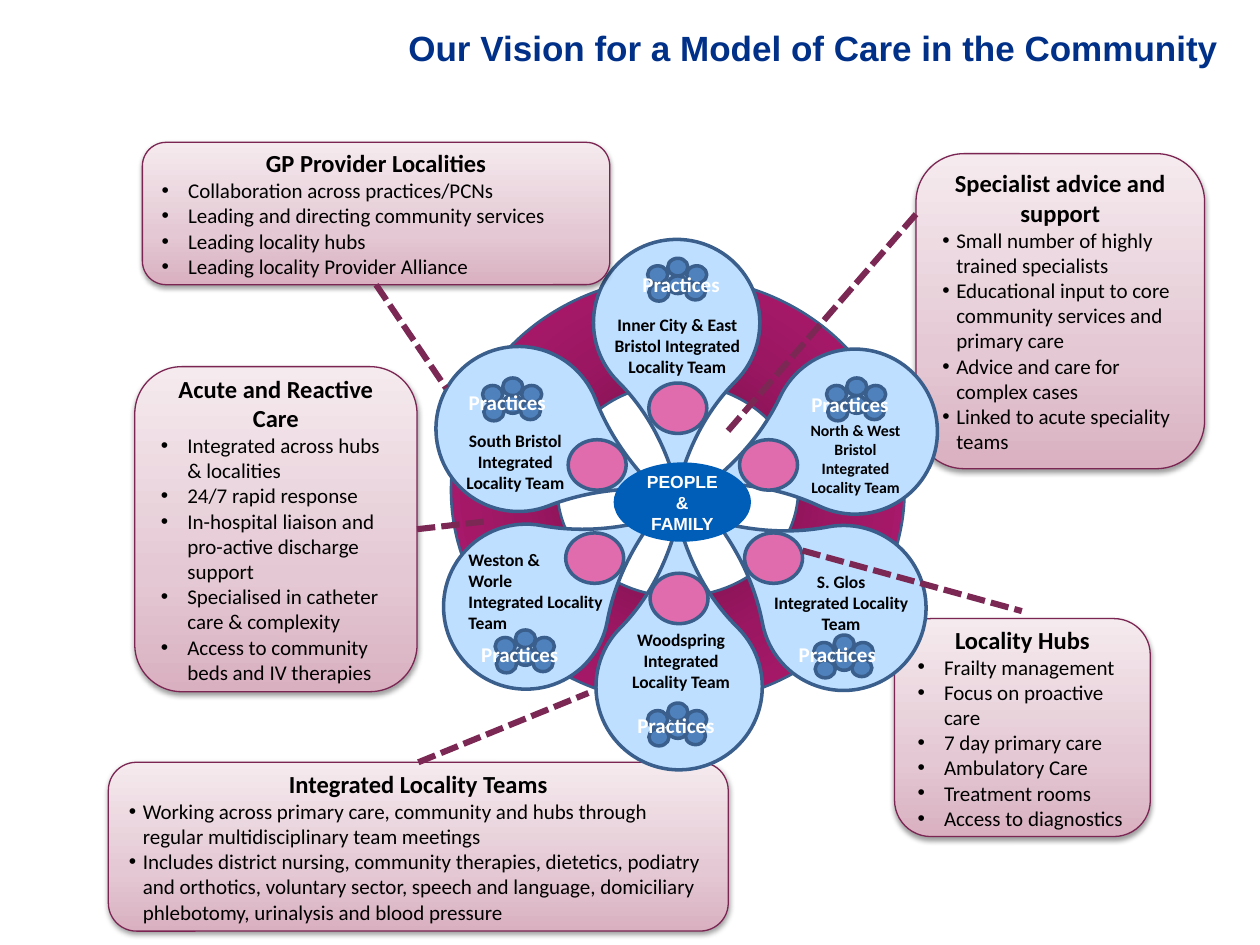
from dataclasses import dataclass

from lxml.etree import SubElement
from pptx import Presentation
from pptx.dml.color import RGBColor
from pptx.enum.dml import MSO_LINE
from pptx.enum.shapes import MSO_CONNECTOR, MSO_SHAPE
from pptx.enum.text import MSO_ANCHOR, MSO_AUTO_SIZE, PP_ALIGN
from pptx.oxml import parse_xml
from pptx.oxml.ns import nsdecls, qn
from pptx.util import Inches, Pt

WIDTH, HEIGHT = Inches(10), Inches(7.5)
COL, ROW = WIDTH / 100, HEIGHT / 75


@dataclass(frozen=True)
class Theme:
    title = dict(size=20, name="Arial", bold=True, color="003087")
    heading = dict(size=14, name="Calibri", bold=True, color="000000")
    item = dict(size=12, name="Calibri", bold=False, color="000000")
    team = dict(size=10, name="Calibri", bold=True, color="000000")
    small_team = dict(size=9, name="Calibri", bold=True, color="000000")
    practice = dict(size=12, name="Calibri", bold=True, color="FFFFFF")
    core = dict(size=10, name="Arial", bold=True, color="FFFFFF")
    panel = ((0, "D9B0C0"), (35, "E4C8D3"), (100, "F5EAEE"))
    ring = ((0, "6D1045"), (50, "9B1762"), (100, "B81B74"))
    panel_line, link, outline = "7B2553", "7C2855", "3A5F8C"
    petal, hub, dot, centre = "BEDFFF", "E06BAD", "4F81BD", "005EB8"


T = Theme()
LINEAR = '<a:lin ang="16200000" scaled="1"/>'
RADIAL = ('<a:path path="circle"><a:fillToRect l="50000" t="50000" '
          'r="50000" b="50000"/></a:path>')
ALT = MSO_SHAPE.FLOWCHART_ALTERNATE_PROCESS
WIDE, TIGHT = 0.21, 0.11

PANELS = {
    "hubs": (ALT, (71, 49.1, 20.3, 17.3), WIDE, "Locality Hubs", [
        "Frailty management", "Focus on proactive care", "7 day primary care",
        "Ambulatory Care", "Treatment rooms", "Access to diagnostics"]),
    "advice": (MSO_SHAPE.ROUNDED_RECTANGLE, (72.7, 12.2, 22.9, 25), TIGHT,
               "Specialist advice and support", [
        "Small number of highly trained specialists",
        "Educational input to core community services and primary care",
        "Advice and care for complex cases",
        "Linked to acute speciality teams"]),
    "teams": (ALT, (8.6, 60.5, 49.2, 13.4), TIGHT, "Integrated Locality Teams", [
        "Working across primary care, community and hubs through regular "
        "multidisciplinary team meetings",
        "Includes district nursing, community therapies, dietetics, podiatry and "
        "orthotics, voluntary sector, speech and language, domiciliary "
        "phlebotomy, urinalysis and blood pressure"]),
    "acute": (ALT, (10.7, 29.1, 22.4, 25.8), WIDE, "Acute and Reactive Care", [
        "Integrated across hubs & localities", "24/7 rapid response",
        "In-hospital liaison and pro-active discharge support",
        "Specialised in catheter care & complexity",
        "Access to community beds and IV therapies"]),
    "gp": (ALT, (11.3, 11.3, 37.1, 11.3), WIDE, "GP Provider Localities", [
        "Collaboration across practices/PCNs",
        "Leading and directing community services",
        "Leading locality hubs", "Leading locality Provider Alliance"]),
}

PETALS = [
    ((35.2, 41.6, 13.1, 13.1), 10.5, 1.327),
    ((34.6, 27.5, 13.1, 13.1), 68.7, 1.284),
    ((61.3, 27.7, 13.1, 13.1), 205.3, 1.333),
    ((47.3, 47.9, 13.2, 13.2), 314.6, 1.415),
    ((60.4, 41.7, 13.1, 13.1), 259.2, 1.321),
    ((47.1, 19, 13.2, 13.2), 134.8, 1.415),
]
TEAMS = [
    ((47.8, 49.4, 12.5, 6.1), T.team, PP_ALIGN.CENTER,
     ["Woodspring Integrated Locality Team"]),
    ((59.4, 44.8, 14.7, 6.1), T.team, PP_ALIGN.CENTER,
     ["S. Glos", "Integrated Locality Team"]),
    ((63.1, 32.9, 9.6, 7.1), T.small_team, PP_ALIGN.CENTER,
     ["North & West Bristol Integrated Locality Team"]),
    ((47.2, 24.4, 13.1, 6.1), T.team, PP_ALIGN.CENTER,
     ["Inner City & East Bristol Integrated Locality Team"]),
    ((35.2, 33.6, 11.4, 6.1), T.team, PP_ALIGN.CENTER,
     ["South Bristol Integrated Locality Team"]),
    ((36.2, 43.1, 14.6, 7.7), T.team, PP_ALIGN.LEFT,
     ["Weston &", "Worle", "Integrated Locality", "Team"]),
]
HUBS = [(58.7, 34.9), (51.5, 30.4), (59.1, 42.3),
        (51.6, 45.5), (44.9, 42.3), (45.1, 34.9)]
CLUSTERS = [
    ((51.4, 20.5), (50, 21.1)), ((65.6, 30), (63.4, 30.6)),
    ((64.6, 50.4), (62.4, 50.4)), ((51.4, 55.8), (49.6, 56.1)),
    ((38.3, 30), (36.2, 30.4)), ((39.3, 50), (37.2, 50.4)),
]
DOTS = [(3, 1.9), (0.1, 2), (0, 0.6), (1.6, 0), (1.6, 1.4), (3.1, 0.6)]
LINKS = [
    (None, None, (63.7, 43.7), (81.1, 48.5)),
    ("teams", 0, (33.2, 60.5), (46.7, 55)),
    ("acute", 3, (33.1, 42), (38.4, 41.4)),
    (None, None, (72.7, 17), (57.6, 34.4)),
    ("gp", 2, (29.8, 22.6), (35.4, 30.8)),
]


def cells(*at):
    return [round(v * (ROW if i % 2 else COL)) for i, v in enumerate(at)]


def put(obj, **values):
    for key, value in values.items():
        setattr(obj, key, value)


def rgb(code):
    return RGBColor.from_string(code)


def write(p, text, style, align=PP_ALIGN.CENTER):
    p.alignment = align
    r = p.add_run()
    r.text = text
    put(r.font, size=Pt(style["size"]), name=style["name"], bold=style["bold"])
    r.font.color.rgb = rgb(style["color"])


def write_all(tf, lines, style, align=PP_ALIGN.CENTER):
    for i, line in enumerate(lines):
        write(tf.add_paragraph() if i else tf.paragraphs[0], line, style, align)


def bullet(p, indent):
    pPr = p._p.get_or_add_pPr()
    put_xml = {"marL": Inches(indent), "indent": -Inches(indent)}
    for key, value in put_xml.items():
        pPr.set(key, str(value))
    SubElement(pPr, qn("a:buFont")).set("typeface", "Arial")
    SubElement(pPr, qn("a:buChar")).set("char", "•")


def gradient(sp, stops, direction):
    gs = "".join(f'<a:gs pos="{pos * 1000}"><a:srgbClr val="{code}"/></a:gs>'
                 for pos, code in stops)
    sp._element.spPr.find(qn("a:prstGeom")).addnext(parse_xml(
        f'<a:gradFill {nsdecls("a")} rotWithShape="1"><a:gsLst>{gs}</a:gsLst>'
        f'{direction}</a:gradFill>'))


def shape(shapes, kind, at, fill=None, line=T.outline, width=2):
    sp = shapes.add_shape(kind, *cells(*at))
    sp.shadow.inherit = False
    if fill:
        sp.fill.solid()
        sp.fill.fore_color.rgb = rgb(fill)
    if line:
        sp.line.color.rgb = rgb(line)
        sp.line.width = Pt(width)
    else:
        sp.line.fill.background()
    return sp


def panel(s, kind, at, indent, heading, items):
    sp = shape(s.shapes, kind, at, line=T.panel_line, width=0.75)
    gradient(sp, T.panel, LINEAR)
    sp._element.spPr.find(qn("a:effectLst")).append(parse_xml(
        f'<a:outerShdw {nsdecls("a")} blurRad="{Pt(3.1)}" dist="{Pt(1.6)}" '
        'dir="5400000" rotWithShape="0"><a:srgbClr val="000000">'
        '<a:alpha val="38000"/></a:srgbClr></a:outerShdw>'))
    tf = sp.text_frame
    put(tf, word_wrap=True, vertical_anchor=MSO_ANCHOR.MIDDLE)
    write(tf.paragraphs[0], heading, T.heading)
    for item in items:
        p = tf.add_paragraph()
        bullet(p, indent)
        write(p, item, T.item, PP_ALIGN.LEFT)
    return sp


def label(shapes, at, lines, style, align):
    tf = shapes.add_textbox(*cells(*at)).text_frame
    tf.word_wrap = True
    write_all(tf, lines, style, align)


def link(s, start, end, sp=None, side=None):
    c = s.shapes.add_connector(MSO_CONNECTOR.STRAIGHT, *cells(*start, *end))
    if sp is not None:
        c.begin_connect(sp, side)
    c.line.color.rgb = rgb(T.link)
    put(c.line, width=Pt(3.5), dash_style=MSO_LINE.SQUARE_DOT)
    SubElement(c._element.spPr, qn("a:effectLst"))


def flower(s):
    shapes = s.shapes.add_group_shape().shapes
    ring = shape(shapes, MSO_SHAPE.DONUT, (35.8, 22, 36, 33.8), width=1.5)
    gradient(ring, T.ring, RADIAL)
    for at, turn, point in PETALS:
        sp = shape(shapes, MSO_SHAPE.TEAR, at, T.petal)
        sp.rotation = turn
        sp.adjustments[0] = point
    for at, style, align, lines in TEAMS:
        label(shapes, at, lines, style, align)
    for x, y in HUBS:
        shape(shapes, MSO_SHAPE.FLOWCHART_CONNECTOR, (x, y, 4.6, 4), T.hub)
    for (x, y), name_at in CLUSTERS:
        for dx, dy in DOTS:
            shape(shapes, MSO_SHAPE.FLOWCHART_CONNECTOR,
                  (x + dx, y + dy, 1.6, 1.4), T.dot)
        label(shapes, (*name_at, 9.1, 2.4), ["Practices"], T.practice, PP_ALIGN.LEFT)


def title(s, at, text):
    sp = s.shapes.title
    left, top, width, height = cells(*at)
    put(sp, left=left, top=top, width=width, height=height)
    tf = sp.text_frame
    put(tf, margin_left=0, margin_right=0, margin_top=0, margin_bottom=0,
        word_wrap=True, auto_size=MSO_AUTO_SIZE.NONE, vertical_anchor=MSO_ANCHOR.TOP)
    write(tf.paragraphs[0], text, T.title)


def main():
    prs = Presentation()
    put(prs, slide_width=WIDTH, slide_height=HEIGHT)
    s = prs.slides.add_slide(prs.slide_layouts[5])
    title(s, (29.5, 2.1, 70.1, 6.7), "Our Vision for a Model of Care in the Community")
    panels = {}
    for name, content in PANELS.items():
        if name == "acute":
            flower(s)
        panels[name] = panel(s, *content)
    for name, side, start, end in LINKS:
        link(s, start, end, panels.get(name), side)
    core = shape(s.shapes, MSO_SHAPE.OVAL, (48.7, 36.7, 10.9, 6.3), T.centre, None)
    put(core.text_frame, word_wrap=True, vertical_anchor=MSO_ANCHOR.MIDDLE)
    write_all(core.text_frame, ["PEOPLE &", "FAMILY"], T.core)
    prs.save("out.pptx")


if __name__ == "__main__":
    main()
